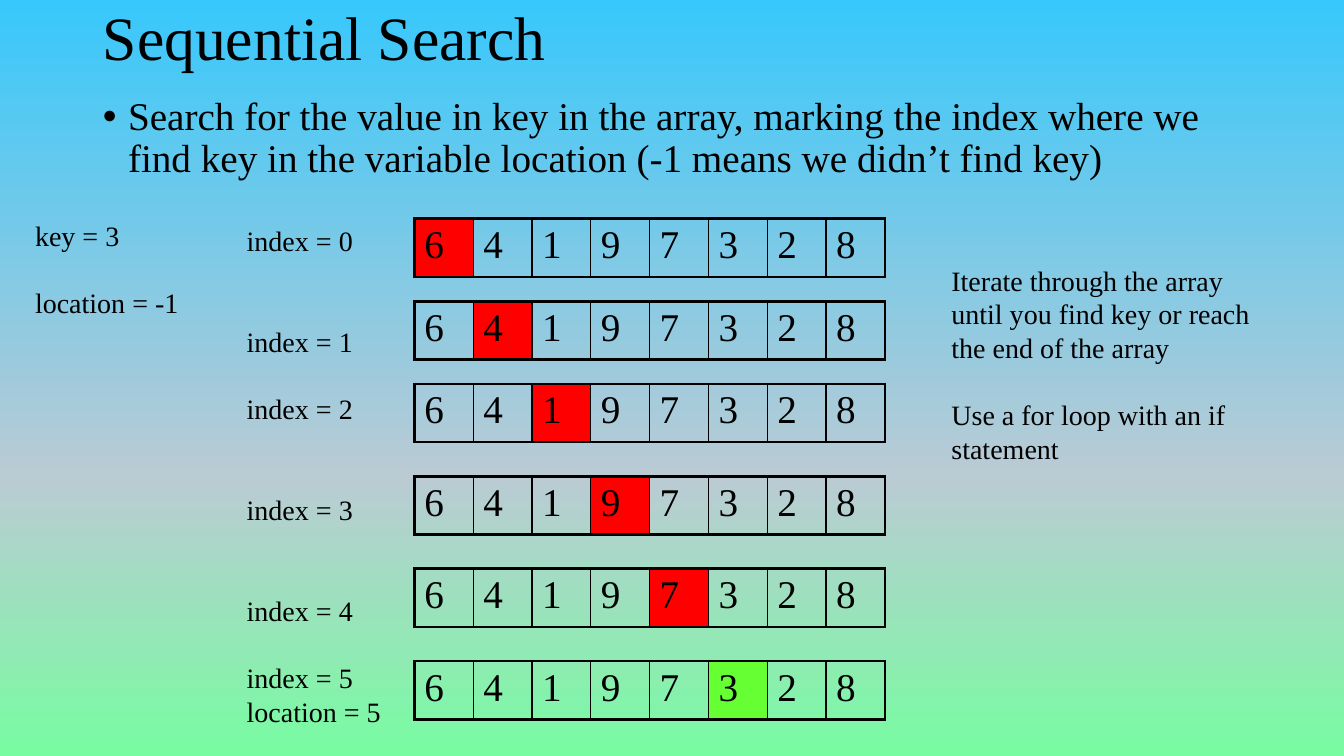
from copy import deepcopy
from dataclasses import dataclass

from lxml import etree
from pptx import Presentation
from pptx import util as u
from pptx.dml.color import RGBColor
from pptx.enum import text
from pptx.oxml import ns


@dataclass(frozen=True)
class Theme:
    font: str = "Times New Roman"
    ink: str = "000000"
    checked: str = "FF0000"
    found: str = "66FF33"
    sky: tuple = ((0, "37C8FB"), (0.63, "BACBD4"), (1, "78FCA1"))
    title: int = 44
    body: int = 28
    label: int = 20
    label_line: int = 24
    frame: float = 2.25
    divider: float = 1


theme = Theme()
deck = Presentation()
deck.slide_width, deck.slide_height = u.Inches(13.333), u.Inches(7.5)


def area(left, top, width, height):
    across, down = deck.slide_width / 100, deck.slide_height / 100
    return [round(share * unit) for share, unit in
            ((left, across), (top, down), (width, across), (height, down))]


def style(para, size):
    para.font.name = theme.font
    para.font.size = u.Pt(size)
    para.font.color.rgb = RGBColor.from_string(theme.ink)
    para.alignment = text.PP_ALIGN.LEFT


page = deck.slides.add_slide(deck.slide_layouts[1])
sky = page.background.fill
sky.gradient()
sky.gradient_angle = 270
stops = page.element.find(".//" + ns.qn("a:gsLst"))
stops.insert(1, deepcopy(stops[0]))
for stop, (position, color) in zip(sky.gradient_stops, theme.sky):
    stop.position = position
    stop.color.rgb = RGBColor.from_string(color)

title, body = page.placeholders
headings = (
    (title, area(6.9, -4.27, 86.25, 19.33), theme.title, text.MSO_ANCHOR.MIDDLE,
     "Sequential Search"),
    (body, area(6.9, 12.13, 86.25, 22.8), theme.body, text.MSO_ANCHOR.TOP,
     "Search for the value in key in the array, marking the index where we "
     "find key in the variable location (-1 means we didn’t find key)"),
)
for box, place, size, anchor, words in headings:
    box.left, box.top, box.width, box.height = place
    frame = box.text_frame
    frame.text = words
    frame.auto_size = text.MSO_AUTO_SIZE.NONE
    frame.vertical_anchor = anchor
    para = frame.paragraphs[0]
    style(para, size)
    para.line_spacing = 0.9

bullet = body.text_frame.paragraphs[0]
bullet.space_before = u.Pt(10)
layout = bullet._p.get_or_add_pPr()
layout.set("marL", str(u.Inches(0.25)))
layout.set("indent", str(u.Inches(-0.25)))
etree.SubElement(layout, ns.qn("a:buChar"), char="•")

values = (6, 4, 1, 9, 7, 3, 2, 8)
key = 3
last = len(values) - 1
for index in range(values.index(key) + 1):
    top = 28.93 + 10.93 * index + 1.29 * max(0, index - 2)
    place = area(30.83, top, 35.03, 7.7)
    array = page.shapes.add_table(1, len(values), *place).table
    array.first_row = array.horz_banding = False
    for column, value in enumerate(values):
        cell = array.cell(0, column)
        cell.text = str(value)
        style(cell.text_frame.paragraphs[0], theme.body)
        borders = {
            "a:lnL": theme.divider if column else theme.frame,
            "a:lnR": theme.divider if column < last else theme.frame,
            "a:lnT": theme.frame,
            "a:lnB": theme.frame,
        }
        for side, weight in borders.items():
            line = etree.SubElement(cell._tc.get_or_add_tcPr(), ns.qn(side), w=str(u.Pt(weight)))
            paint = etree.SubElement(line, ns.qn("a:solidFill"))
            etree.SubElement(paint, ns.qn("a:srgbClr"), val=theme.ink)
        if column == index:
            cell.fill.solid()
            color = theme.found if value == key else theme.checked
            cell.fill.fore_color.rgb = RGBColor.from_string(color)
        else:
            cell.fill.background()

labels = (
    (area(1.87, 28.27, 12.22, 14.8), (("key = 3", 0), ("location = -1", 1))),
    (area(17.62, 28.93, 11.55, 68.67),
     (("index = 0", 0), ("index = 1", 2), ("index = 2", 1), ("index = 3", 2),
      ("index = 4", 2), ("index = 5", 1), ("location = 5", 0))),
    (area(70.05, 34.13, 23.85, 28.27),
     (("Iterate through the array", 0), ("until you find key or reach", 0),
      ("the end of the array", 0), ("Use a for loop with an if", 1), ("statement", 0))),
)
for place, lines in labels:
    frame = page.shapes.add_textbox(*place).text_frame
    frame.word_wrap = False
    frame.text = "\n".join(words for words, gap in lines)
    for para, (words, gap) in zip(frame.paragraphs, lines):
        style(para, theme.label)
        para.line_spacing = u.Pt(theme.label_line)
        para.space_before = u.Pt(gap * theme.label_line)

deck.save("out.pptx")
